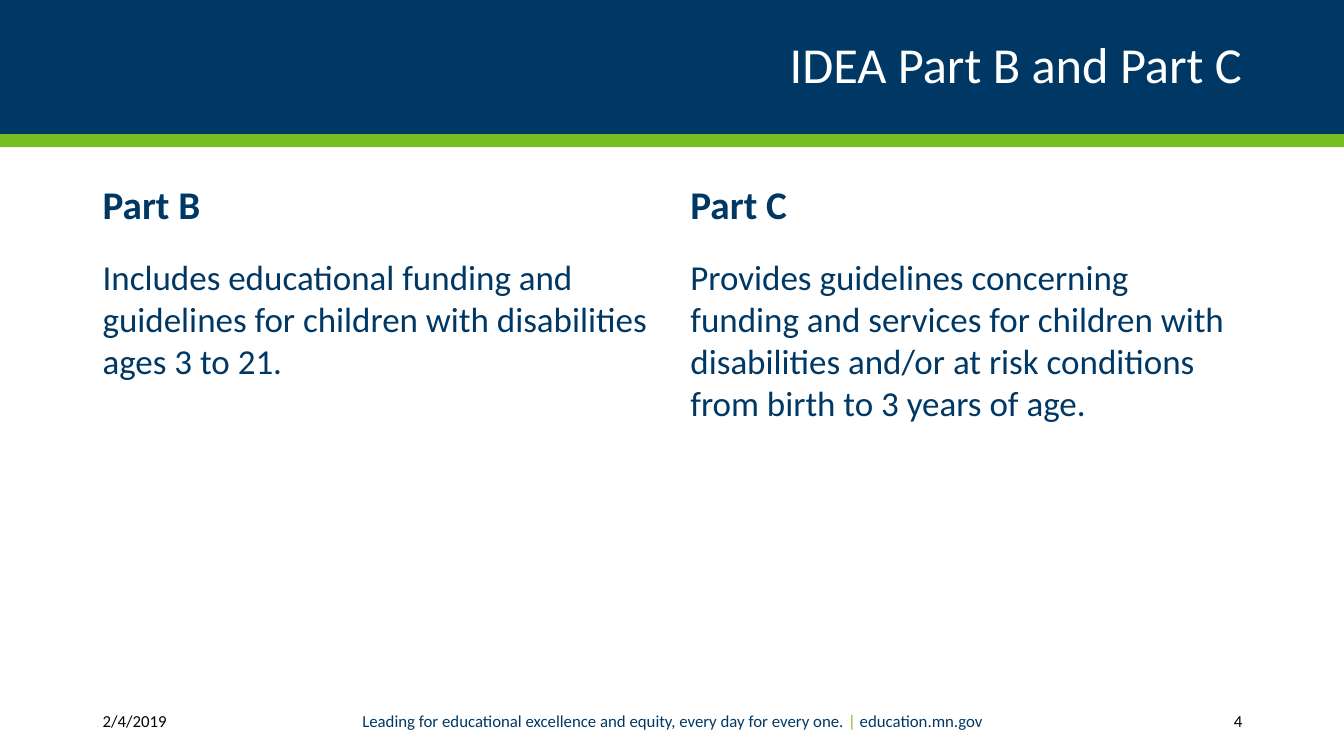
import pptx
import pptx.util
import pptx.dml.color
import pptx.enum.shapes
import pptx.enum.text

Inches, Pt = pptx.util.Inches, pptx.util.Pt
ALIGN = pptx.enum.text.PP_ALIGN
ANCHOR = pptx.enum.text.MSO_ANCHOR

NAVY, GREEN, WHITE, BLACK = "003865", "78BE21", "FFFFFF", "000000"
LEFT, COLUMN_W, COLUMN_STEP = 0.92, 5.67, 5.83
FOOTER_Y, FOOTER_H = 6.95, 0.4


def rgb(value):
    return pptx.dml.color.RGBColor.from_string(value)


class SlideBuilder:
    font = "Calibri"

    def __init__(self, slide):
        self.s = slide

    def style(self, r, size, color, bold=False):
        r.font.name = self.font
        r.font.size = Pt(size)
        r.font.bold = bold
        r.font.color.rgb = rgb(color)

    def band(self, y, h, color):
        sp = self.s.shapes.add_shape(
            pptx.enum.shapes.MSO_SHAPE.RECTANGLE,
            0, Inches(y), Inches(13.33), Inches(h))
        sp.shadow.inherit = False
        sp.fill.solid()
        sp.fill.fore_color.rgb = rgb(color)
        sp.line.fill.background()

    def title(self, text, x, y, w, h):
        sp = self.s.shapes.title
        sp.left, sp.top, sp.width, sp.height = map(Inches, (x, y, w, h))
        tf = sp.text_frame
        tf.text = text
        tf.auto_size = pptx.enum.text.MSO_AUTO_SIZE.NONE
        tf.vertical_anchor = ANCHOR.MIDDLE
        p = tf.paragraphs[0]
        p.alignment = ALIGN.RIGHT
        p.line_spacing = 0.9
        self.style(p.runs[0], 36, WHITE)
        # Bring the title in front of the bands
        sp.element.getparent().append(sp.element)

    def text_box(self, x, y, w, h):
        sp = self.s.shapes.add_textbox(*map(Inches, (x, y, w, h)))
        sp.text_frame.word_wrap = True
        return sp

    def column(self, x, heading, body):
        sp = self.text_box(x, 1.74, COLUMN_W, 5.01)
        sp.fill.solid()
        sp.fill.fore_color.rgb = rgb(WHITE)
        tf = sp.text_frame
        tf.text = heading
        tf.add_paragraph().text = body
        for p, size, bold in zip(tf.paragraphs, (28, 25), (True, False)):
            p.space_before = p.space_after = Pt(10)
            self.style(p.runs[0], size, NAVY, bold)

    def footer(self, x, w, align, parts):
        tf = self.text_box(x, FOOTER_Y, w, FOOTER_H).text_frame
        tf.vertical_anchor = ANCHOR.MIDDLE
        p = tf.paragraphs[0]
        p.alignment = align
        for text, color in parts:
            r = p.add_run()
            r.text = text
            self.style(r, 12, color)


def main():
    prs = pptx.Presentation()
    prs.slide_width, prs.slide_height = Inches(13.33), Inches(7.5)
    b = SlideBuilder(prs.slides.add_slide(prs.slide_layouts[5]))

    # Header
    b.band(0, 1.33, NAVY)
    b.band(1.33, 0.13, GREEN)
    b.title("IDEA Part B and Part C", LEFT, 0.17, 11.5, 1)

    # Two columns
    columns = [
        ("Part B", "Includes educational funding and guidelines for children "
                   "with disabilities ages 3 to 21."),
        ("Part C", "Provides guidelines concerning funding and services for "
                   "children with disabilities and/or at risk conditions "
                   "from birth to 3 years of age."),
    ]
    for i, (heading, body) in enumerate(columns):
        b.column(LEFT + i * COLUMN_STEP, heading, body)

    # Footer
    b.footer(LEFT, 1.49, ALIGN.LEFT, [("2/4/2019", BLACK)])
    b.footer(10.82, 1.6, ALIGN.RIGHT, [("4", BLACK)])
    b.footer(3.16, 7.02, ALIGN.CENTER, [
        ("Leading for educational excellence and equity, "
         "every day for every one. ", NAVY),
        ("| ", GREEN),
        ("education.mn.gov", NAVY),
    ])

    prs.save("out.pptx")


if __name__ == "__main__":
    main()
